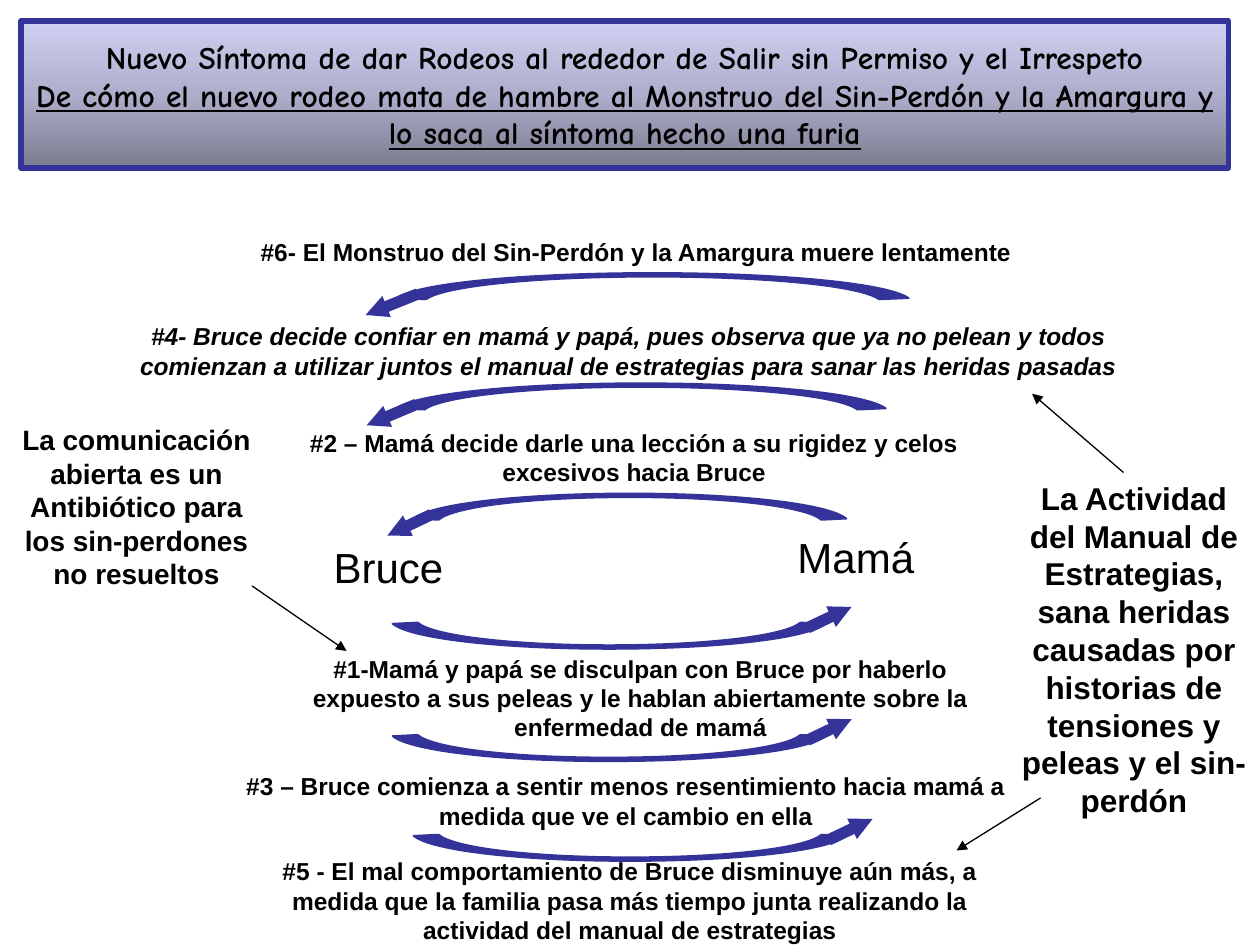
"""Build the slide about the cycle of talks between Bruce and Mamá."""
from copy import deepcopy

from pptx import Presentation
from pptx.dml.color import RGBColor
from pptx.enum.shapes import MSO_CONNECTOR
from pptx.enum.text import MSO_ANCHOR, MSO_AUTO_SIZE, PP_ALIGN
from pptx.oxml.ns import qn
from pptx.oxml.xmlchemy import OxmlElement
from pptx.util import Inches, Pt

LINE = MSO_CONNECTOR.STRAIGHT
MID = MSO_ANCHOR.MIDDLE
FIXED = MSO_AUTO_SIZE.NONE
CENTER = PP_ALIGN.CENTER
HEX = {"ink": "000000", "blue": "333399", "low": "7B7B8F", "half": "AEAECC", "high": "CFCFF2"}
TINT = {name: RGBColor.from_string(code) for name, code in HEX.items()}

deck = Presentation()
deck.slide_width, deck.slide_height = Inches(10), Inches(7.5)
COL, ROW = deck.slide_width / 120, deck.slide_height / 90
slide = deck.slides.add_slide(deck.slide_layouts[5])
shapes = slide.shapes


def write(para, text, size=14, font="Arial", bold=True, slant=False, under=False):
    para.alignment = CENTER
    run = para.add_run()
    run.text = text
    style = run.font
    style.name, style.size, style.bold = font, Pt(size), bold
    style.italic, style.underline = slant, under
    style.color.rgb = TINT["ink"]


def arrow(home, x1, y1, x2, y2, tint="ink", thick=0.75, tip="med"):
    link = home.add_connector(
        LINE, round(x1 * COL), round(y1 * ROW), round(x2 * COL), round(y2 * ROW))
    link.line.width = Pt(thick)
    link.line.color.rgb = TINT[tint]
    props = link._element.spPr
    tail = OxmlElement("a:tailEnd")
    for key, value in (("type", "triangle"), ("w", tip), ("len", tip)):
        tail.set(key, value)
    props.find(qn("a:ln")).append(tail)
    props.append(OxmlElement("a:effectLst"))


title = shapes.title
title.left, title.top = round(2 * COL), round(2 * ROW)
title.width, title.height = round(115 * COL), round(14 * ROW)
title.line.color.rgb, title.line.width = TINT["blue"], Pt(3)
title.fill.gradient()
title.fill.gradient_angle = 90
stops = title._element.spPr.find(".//" + qn("a:gsLst"))
stops.insert(1, deepcopy(stops[0]))
for stop, place, tint in zip(title.fill.gradient_stops, (0, 0.5, 1), ("low", "half", "high")):
    stop.position, stop.color.rgb = place, TINT[tint]
frame = title.text_frame
frame.word_wrap, frame.auto_size, frame.vertical_anchor = True, FIXED, MID
head = frame.paragraphs[0]
write(head, "Nuevo Síntoma de dar Rodeos al rededor de Salir sin Permiso y el Irrespeto",
      size=18, font="Comic Neue")
head.add_line_break()
write(head, "De cómo el nuevo rodeo mata de hambre al Monstruo del Sin-Perdón y la Amargura y "
      "lo saca al síntoma hecho una furia", size=18, font="Comic Neue", under=True)

name = {"size": 24, "bold": False}
notes = [
    (26, 51, 22, 6.1, "Bruce", name),
    (62, 50, 39, 6.1, "Mamá", name),
    (25.5, 61.65, 71, 9.7, "#1-Mamá y papá se disculpan con Bruce por haberlo expuesto a sus "
     "peleas y le hablan abiertamente sobre la enfermedad de mamá", {}),
    (25.4, 40.15, 70, 6.8, "#2 – Mamá decide darle una lección a su rigidez y celos excesivos "
     "hacia Bruce", {}),
    (9, 30, 101.8, 6.8, "#4- Bruce decide confiar en mamá y papá, pues observa que ya no pelean "
     "y todos comienzan a utilizar juntos el manual de estrategias para sanar las heridas "
     "pasadas", {"slant": True}),
    (22, 72.85, 75.2, 6.8, "#3 – Bruce comienza a sentir menos resentimiento hacia mamá a medida "
     "que ve el cambio en ella", {}),
    (24, 80.95, 72, 9.7, "#5 - El mal comportamiento de Bruce disminuye aún más, a medida que la "
     "familia pasa más tiempo junta realizando la actividad del manual de estrategias", {}),
    (23, 22, 75.2, 4.1, "#6- El Monstruo del Sin-Perdón y la Amargura muere lentamente", {}),
    (0, 39.65, 26, 17.4, "La comunicación abierta es un Antibiótico para los sin-perdones no "
     "resueltos", {"size": 16}),
    (96, 45, 24, 34, "La Actividad del Manual de Estrategias, sana heridas causadas por "
     "historias de tensiones y peleas y el sin-perdón", {"size": 18}),
]
for x, y, wide, high, text, form in notes:
    box = shapes.add_textbox(round(x * COL), round(y * ROW), round(wide * COL), round(high * ROW))
    box.text_frame.word_wrap = True
    write(box.text_frame.paragraphs[0], text, **form)

inner = [(66, 42), (103, 20), (286, 6), (500, 6)]
outer = [(9, 40), (49, 16), (257, 0), (500, 0)]
inner, outer = (half + [(1000 - x, y) for x, y in half[-2::-1]] for half in (inner, outer))
outer.reverse()
moves = [("moveTo", inner[:1]), ("cubicBezTo", inner[1:4]), ("cubicBezTo", inner[4:]),
         ("lnTo", outer[:1]), ("cubicBezTo", outer[1:4]), ("cubicBezTo", outer[4:]),
         ("close", [])]

DEEP = 6
arcs = [(37, 61.8, 42, -1), (37, 72.5, 42, -1), (39, 47, 42, 1),
        (37.3, 36.5, 47.5, 1), (39, 82, 42, -1), (37.3, 26, 49.7, 1)]
for left, peak, wide, way in arcs:
    home = shapes.add_group_shape().shapes
    top = peak if way > 0 else peak - DEEP
    x1, x2 = round(left * COL), round((left + wide) * COL)
    y1, y2 = round(top * ROW), round((top + DEEP) * ROW)
    build = home.build_freeform(x1, y1)
    build.add_line_segments([(x2, y1), (x2, y2)])
    arc = build.convert_to_shape()
    track = arc._element.spPr.find(".//" + qn("a:path"))
    for old in list(track):
        track.remove(old)
    track.set("w", "1000")
    track.set("h", "100")
    for verb, spots in moves:
        move = OxmlElement("a:" + verb)
        for x, y in spots:
            spot = OxmlElement("a:pt")
            spot.set("x", str(x))
            spot.set("y", str(y))
            move.append(spot)
        track.append(move)
    arc.rotation = 0 if way > 0 else 180
    arc.shadow.inherit = False
    arc.fill.solid()
    arc.fill.fore_color.rgb = arc.line.color.rgb = TINT["blue"]
    arc.line.width = Pt(1)
    start = left if way > 0 else left + wide
    reach = way * wide * 0.05
    arrow(home, start + reach, peak + way * 2, start - reach, peak + way * 4,
          tint="blue", thick=6.5, tip="sm")

for ends in ((99.1, 76, 91.1, 81), (24, 55.8, 33, 62), (107, 45, 98.3, 37.5)):
    arrow(shapes, *ends)

deck.save("out.pptx")
